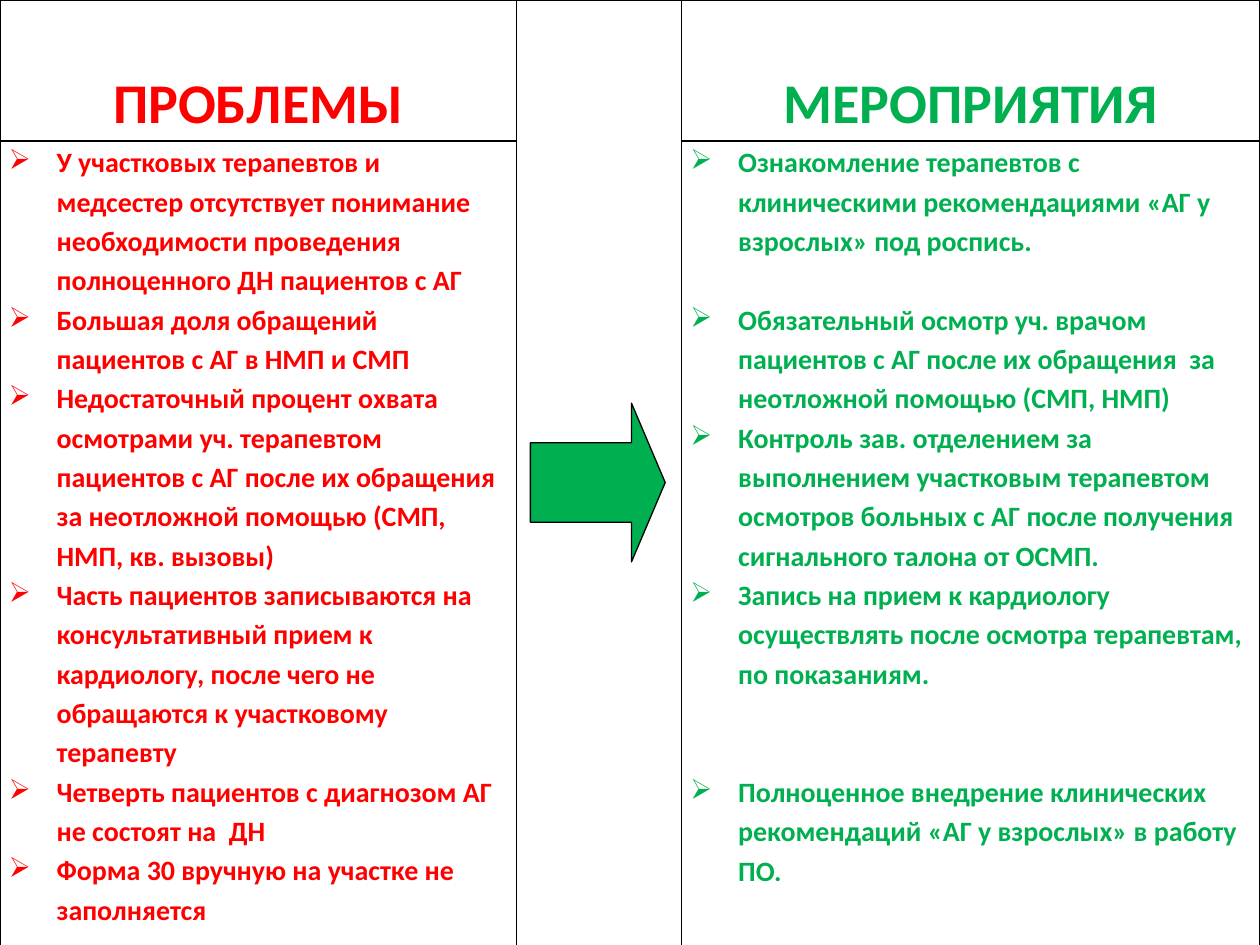
from lxml import etree
from pptx import Presentation
from pptx import util as u
from pptx.dml.color import RGBColor
from pptx.enum import shapes, text
from pptx.oxml.ns import qn

RED, GREEN, BLACK = "FF0000", "00B050", "000000"
COLUMNS, ROWS = (4.1, 1.31, 4.59), (1.12, 6.78)
LINE = 22.5  # height of one line of list text, in points

# Each list item is followed by the number of lines left free below it.
PROBLEMS = [
    ("У участковых терапевтов и медсестер отсутствует понимание необходимости "
     "проведения полноценного ДН пациентов с АГ", 0),
    ("Большая доля обращений пациентов с АГ в НМП и СМП", 0),
    ("Недостаточный процент охвата осмотрами уч. терапевтом пациентов с АГ после "
     "их обращения за неотложной помощью (СМП, НМП, кв. вызовы)", 0),
    ("Часть пациентов записываются на консультативный прием к кардиологу, после "
     "чего не обращаются к участковому терапевту", 0),
    ("Четверть пациентов с диагнозом АГ не состоят на  ДН", 0),
    ("Форма 30 вручную на участке не заполняется", 0),
]
MEASURES = [
    ("Ознакомление терапевтов с клиническими рекомендациями «АГ у взрослых» "
     "под роспись.", 1),
    ("Обязательный осмотр уч. врачом пациентов с АГ после их обращения  за "
     "неотложной помощью (СМП, НМП)", 0),
    ("Контроль зав. отделением за выполнением участковым терапевтом осмотров "
     "больных с АГ после получения сигнального талона от ОСМП.", 0),
    ("Запись на прием к кардиологу осуществлять после осмотра терапевтам, "
     "по показаниям.", 2),
    ("Полноценное внедрение клинических рекомендаций «АГ у взрослых» "
     "в работу ПО.", 0),
]


def rgb(value):
    return RGBColor.from_string(value)


def set_attrs(obj, values):
    for name, value in values.items():
        setattr(obj, name, value)


def add_run(p, words, size, color):
    r = p.add_run()
    r.text = words
    set_attrs(r.font, {"name": "Calibri", "size": u.Pt(size), "bold": True})
    r.font.color.rgb = rgb(color)


def add_bullet(p):
    pPr = p._p.get_or_add_pPr()
    pPr.set("marL", str(u.Inches(0.38)))
    pPr.set("indent", str(-u.Inches(0.38)))
    etree.SubElement(pPr, qn("a:buFont"), typeface="Wingdings")
    etree.SubElement(pPr, qn("a:buChar"), char="Ø")


def format_cell(cell):
    """Clear the fill, set the margins and draw a thin border on every side."""
    cell.fill.background()
    side, none = u.Inches(0.07), u.Inches(0)
    set_attrs(cell, {"margin_left": side, "margin_right": side,
                     "margin_top": none, "margin_bottom": none})
    tcPr = cell._tc.get_or_add_tcPr()
    for i, edge in enumerate(("lnL", "lnR", "lnT", "lnB")):
        ln = etree.Element(qn(f"a:{edge}"), w=str(u.Pt(1)))
        fill = etree.SubElement(ln, qn("a:solidFill"))
        etree.SubElement(fill, qn("a:srgbClr"), val=BLACK)
        tcPr.insert(i, ln)


def fill_heading(cell, words, color):
    cell.vertical_anchor = text.MSO_ANCHOR.MIDDLE
    p = cell.text_frame.paragraphs[0]
    set_attrs(p, {"alignment": text.PP_ALIGN.CENTER, "line_spacing": 2.0})
    add_run(p, words, 32, color)


def fill_list(cell, items, color):
    tf = cell.text_frame
    for i, (words, free_lines) in enumerate(items):
        p = tf.add_paragraph() if i else tf.paragraphs[0]
        set_attrs(p, {"line_spacing": 1.15, "space_after": u.Pt(free_lines * LINE)})
        add_bullet(p)
        add_run(p, words, 16, color)


def add_grid(s):
    frame = s.shapes.add_table(len(ROWS), len(COLUMNS), 0, 0,
                               u.Inches(sum(COLUMNS)), u.Inches(sum(ROWS)))
    table = frame.table
    set_attrs(table, {"first_row": False, "horz_banding": False})
    for column, width in zip(table.columns, COLUMNS):
        column.width = u.Inches(width)
    for row, height in zip(table.rows, ROWS):
        row.height = u.Inches(height)
    for cell in table.iter_cells():
        format_cell(cell)
    table.cell(0, 1).merge(table.cell(1, 1))
    return table


def add_arrow(s):
    sp = s.shapes.add_shape(shapes.MSO_SHAPE.RIGHT_ARROW, u.Inches(4.21),
                            u.Inches(3.2), u.Inches(1.07), u.Inches(1.26))
    sp.adjustments[0], sp.adjustments[1] = 0.5, 0.25
    sp.shadow.inherit = False
    sp.fill.solid()
    sp.fill.fore_color.rgb = rgb(GREEN)
    sp.line.color.rgb = rgb(BLACK)
    sp.line.width = u.Pt(0.75)


def main():
    prs = Presentation()
    set_attrs(prs, {"slide_width": u.Inches(10), "slide_height": u.Inches(7.5)})
    s = prs.slides.add_slide(prs.slide_layouts[6])
    table = add_grid(s)
    for column, heading, items, color in ((0, "ПРОБЛЕМЫ", PROBLEMS, RED),
                                          (2, "МЕРОПРИЯТИЯ", MEASURES, GREEN)):
        fill_heading(table.cell(0, column), heading, color)
        fill_list(table.cell(1, column), items, color)
    add_arrow(s)
    prs.save("out.pptx")


if __name__ == "__main__":
    main()
